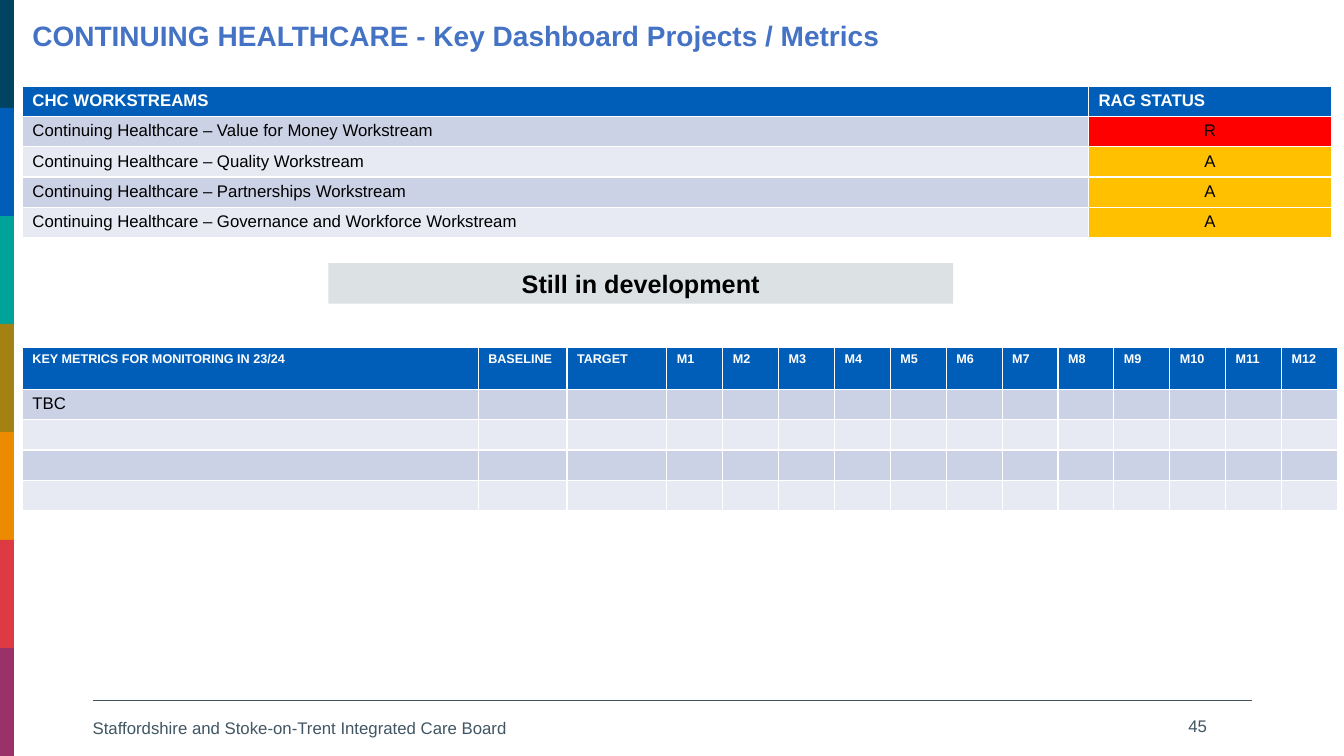
from lxml import etree
from pptx import Presentation
from pptx.dml.color import RGBColor
from pptx.enum import shapes, text
from pptx.oxml import ns
from pptx.util import Pt

COLORS = {
    "header": "005EB8", "band_dark": "CCD2E6", "band_light": "E7EAF3",
    "R": "FF0000", "A": "FFC000", "title": "4472C4", "footer": "415563",
    "banner": "DCE1E3", "black": "000000", "white": "FFFFFF",
}
STRIPE_COLORS = ["004461", "005EB8", "00A399", "A38213", "ED8B00", "DD3A44", "9A3269"]
WORKSTREAMS = [
    ("CHC WORKSTREAMS", "RAG STATUS"),
    ("Continuing Healthcare – Value for Money Workstream", "R"),
    ("Continuing Healthcare – Quality Workstream", "A"),
    ("Continuing Healthcare – Partnerships Workstream", "A"),
    ("Continuing Healthcare – Governance and Workforce Workstream", "A"),
]
MONTHS = [f"M{month}" for month in range(1, 13)]
METRICS = [
    ["KEY METRICS FOR MONITORING IN 23/24", "BASELINE", "TARGET", *MONTHS],
    ["TBC"] + [""] * 14,
    *[[""] * 15 for _ in range(3)],
]


def paint(fill, color):
    fill.solid()
    fill.fore_color.rgb = RGBColor.from_string(color)


def write(paragraph, wording, size, color, bold=False, align=text.PP_ALIGN.LEFT):
    paragraph.text = wording
    paragraph.alignment = align
    font = paragraph.font
    font.name, font.size, font.bold = "Arial", Pt(size), bold
    font.color.rgb = RGBColor.from_string(COLORS[color])


def add_label(slide, box, wording, size, color, bold=False, align=text.PP_ALIGN.LEFT,
              insets=(7.2, 7.2), wrap=True):
    """Text box whose insets are its left and right margins."""
    label = slide.shapes.add_textbox(*map(Pt, box))
    frame = label.text_frame
    frame.word_wrap = wrap
    frame.margin_left, frame.margin_right = map(Pt, insets)
    write(frame.paragraphs[0], wording, size, color, bold, align)


def add_block(slide, box, color):
    block = slide.shapes.add_shape(shapes.MSO_SHAPE.RECTANGLE, *map(Pt, box))
    block.shadow.inherit = False
    block.line.fill.background()
    paint(block.fill, color)
    return block


def add_side_stripe(slide, box):
    left, top, width, height = box
    step = height / len(STRIPE_COLORS)
    for index, color in enumerate(STRIPE_COLORS):
        add_block(slide, (left, top + index * step, width, step), color)


def add_banner(slide, box, wording):
    banner = add_block(slide, box, COLORS["banner"])
    write(banner.text_frame.paragraphs[0], wording, 18, "black", True, text.PP_ALIGN.CENTER)


def add_banded_table(slide, box, rows, widths, heights, header_size):
    """Table with a blue header, striped rows and status cells in their own colour."""
    table = slide.shapes.add_table(len(rows), len(widths), *map(Pt, box)).table
    for column, width in zip(table.columns, widths):
        column.width = Pt(width)
    for row_index, (values, height) in enumerate(zip(rows, heights)):
        table.rows[row_index].height = Pt(height)
        band = "band_dark" if row_index % 2 else "band_light"
        for column_index, value in enumerate(values):
            cell = table.cell(row_index, column_index)
            paragraph = cell.text_frame.paragraphs[0]
            if row_index == 0:
                paint(cell.fill, COLORS["header"])
                write(paragraph, value, header_size, "white", True)
            else:
                is_status = value in ("R", "A")
                paint(cell.fill, COLORS[value if is_status else band])
                align = text.PP_ALIGN.CENTER if is_status else text.PP_ALIGN.LEFT
                write(paragraph, value, 12, "black", align=align)


def add_footer(slide, box, wording, number):
    left, top, width, height = box
    rule = slide.shapes.add_connector(
        shapes.MSO_CONNECTOR.STRAIGHT, Pt(left), Pt(top), Pt(left + width), Pt(top))
    rule.line.width = Pt(1)
    rule.line.color.rgb = RGBColor.from_string(COLORS["footer"])
    etree.SubElement(rule._element.spPr, ns.qn("a:effectLst"))
    add_label(slide, (left, top + 8.6, 576, height), wording, 12, "footer", insets=(0, 7.2))
    add_label(slide, (left + width - 248, top + 7.6, 216, height), number, 12, "footer",
              align=text.PP_ALIGN.RIGHT, insets=(7.2, 0))


def build_dashboard(slide, box):
    left, top, width, height = box
    add_side_stripe(slide, (left, top, 10, height))
    add_footer(slide, (left + 66.2, top + 500.4, 828, 21.6),
               "Staffordshire and Stoke-on-Trent Integrated Care Board", "45")
    content = left + 16
    add_label(slide, (content, top + 9.4, 625, 31.5),
              "CONTINUING HEALTHCARE - Key Dashboard Projects / Metrics", 20, "title", True,
              wrap=False)
    add_banded_table(slide, (content, top + 61.6, 935, 103), WORKSTREAMS,
                     [761.5, 173.5], [20.6] * 5, 12)
    add_banner(slide, (left + 234.5, top + 187.9, 446.4, 29), "Still in development")
    add_banded_table(slide, (content, top + 248, 939.4, 113), METRICS,
                     [325.6, 63.4, 71.4] + [39.92] * 12, [30.2, 21] + [20.6] * 3, 9)


def main():
    presentation = Presentation()
    presentation.slide_width, presentation.slide_height = Pt(960), Pt(540)
    slide = presentation.slides.add_slide(presentation.slide_layouts[6])
    build_dashboard(slide, (0, 0, 960, 540))
    presentation.save("out.pptx")


if __name__ == "__main__":
    main()
